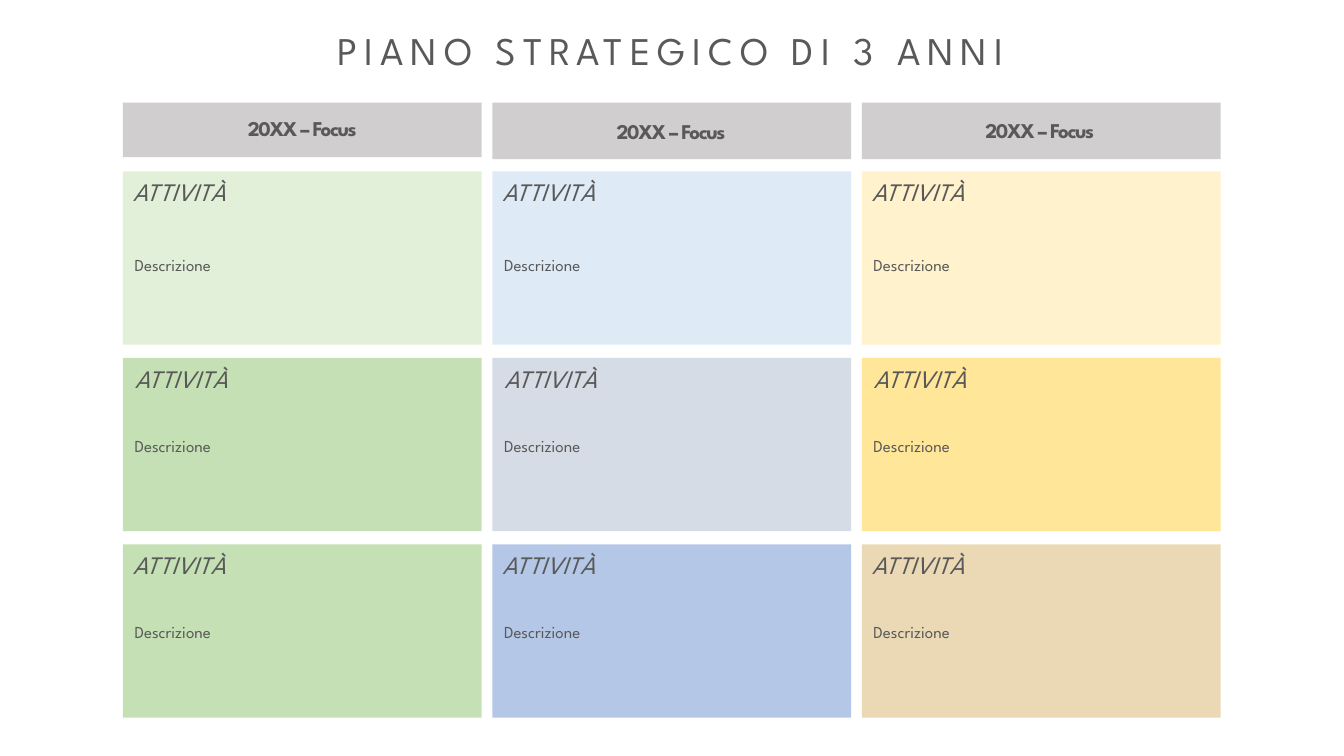
from pptx import Presentation
from pptx.dml.color import RGBColor
from pptx.enum.shapes import MSO_SHAPE
from pptx.enum.text import MSO_AUTO_SIZE, PP_ALIGN
from pptx.util import Pt

RECTANGLE = MSO_SHAPE.RECTANGLE
GROW = MSO_AUTO_SIZE.SHAPE_TO_FIT_TEXT
LEFT, CENTER = PP_ALIGN.LEFT, PP_ALIGN.CENTER

TEXT_GRAY = RGBColor(0x59, 0x59, 0x59)
HEADER_GRAY = RGBColor(0xD0, 0xCE, 0xCE)
PALE_GREEN = RGBColor(0xE2, 0xF0, 0xD9)
GREEN = RGBColor(0xC5, 0xE0, 0xB4)
PALE_BLUE = RGBColor(0xDE, 0xEB, 0xF7)
BLUE_GRAY = RGBColor(0xD6, 0xDC, 0xE5)
BLUE = RGBColor(0xB4, 0xC7, 0xE7)
PALE_YELLOW = RGBColor(0xFF, 0xF2, 0xCC)
YELLOW = RGBColor(0xFF, 0xE6, 0x99)
TAN = RGBColor(0xEB, 0xD9, 0xB6)

GRID_LEFT, GRID_TOP = 87.84, 122.4
COLUMN_STEP, ROW_STEP = 263.9, 133.2
CARD_WIDTH, CARD_HEIGHT = 256.3, 123.8
HEADER_TOP = 73.4
HEADERS = [
    ("20XX – Focus", 38.9, 79.2),
    ("20XX – Focus", 40.3, 81.4),
    ("20XX – Focus", 40.3, 80.6),
]
CARD_COLORS = [
    (PALE_GREEN, GREEN, GREEN),
    (PALE_BLUE, BLUE_GRAY, BLUE),
    (PALE_YELLOW, YELLOW, TAN),
]
LABEL_INDENTS = (0, 1.4, 0)
DESCRIPTION_OFFSETS = (56.2, 52, 51.6)


class PlanSlide:
    """Draws the plan's elements on one slide in a shared style."""

    def __init__(self, slide, font_name, text_color):
        self.slide = slide
        self.font_name = font_name
        self.text_color = text_color

    def block(self, left, top, width, height, color):
        shape = self.slide.shapes.add_shape(
            RECTANGLE, Pt(left), Pt(top), Pt(width), Pt(height))
        shape.shadow.inherit = False
        shape.fill.solid()
        shape.fill.fore_color.rgb = color
        shape.line.fill.background()

    def text(self, text, left, top, width, height, size, align=LEFT,
             bold=False, italic=False, spacing=0):
        box = self.slide.shapes.add_textbox(
            Pt(left), Pt(top), Pt(width), Pt(height))
        frame = box.text_frame
        frame.word_wrap = True
        frame.auto_size = GROW
        frame.text = text
        paragraph = frame.paragraphs[0]
        paragraph.alignment = align
        run = paragraph.runs[0]
        run.font.name = self.font_name
        run.font.size = Pt(size)
        run.font.bold = bold
        run.font.italic = italic
        run.font.color.rgb = self.text_color
        if spacing:
            run._r.get_or_add_rPr().set("spc", str(spacing * 100))


def main():
    presentation = Presentation()
    presentation.slide_width = Pt(960)
    presentation.slide_height = Pt(540)
    slide = presentation.slides.add_slide(presentation.slide_layouts[6])
    plan = PlanSlide(slide, "League Spartan", TEXT_GRAY)

    plan.text("PIANO STRATEGICO DI 3 ANNI", 13, 15.1, 932.4, 41, 28,
              align=CENTER, spacing=5)

    for column, (header, header_height, text_top) in enumerate(HEADERS):
        left = GRID_LEFT + column * COLUMN_STEP
        plan.block(left, HEADER_TOP, CARD_WIDTH, header_height, HEADER_GRAY)
        plan.text(header, left - column * 0.5, text_top, CARD_WIDTH, 25.2, 15,
                  align=CENTER, bold=True, spacing=-1)
        for row, color in enumerate(CARD_COLORS[column]):
            top = GRID_TOP + row * ROW_STEP
            plan.block(left, top, CARD_WIDTH, CARD_HEIGHT, color)
            plan.text("ATTIVITÀ", left + LABEL_INDENTS[row], top + 0.3,
                      221, 28.8, 18, italic=True)
            plan.text("Descrizione", left + 1.2,
                      top + DESCRIPTION_OFFSETS[row], 255.6, 21.6, 12)

    presentation.save("out.pptx")


if __name__ == "__main__":
    main()
